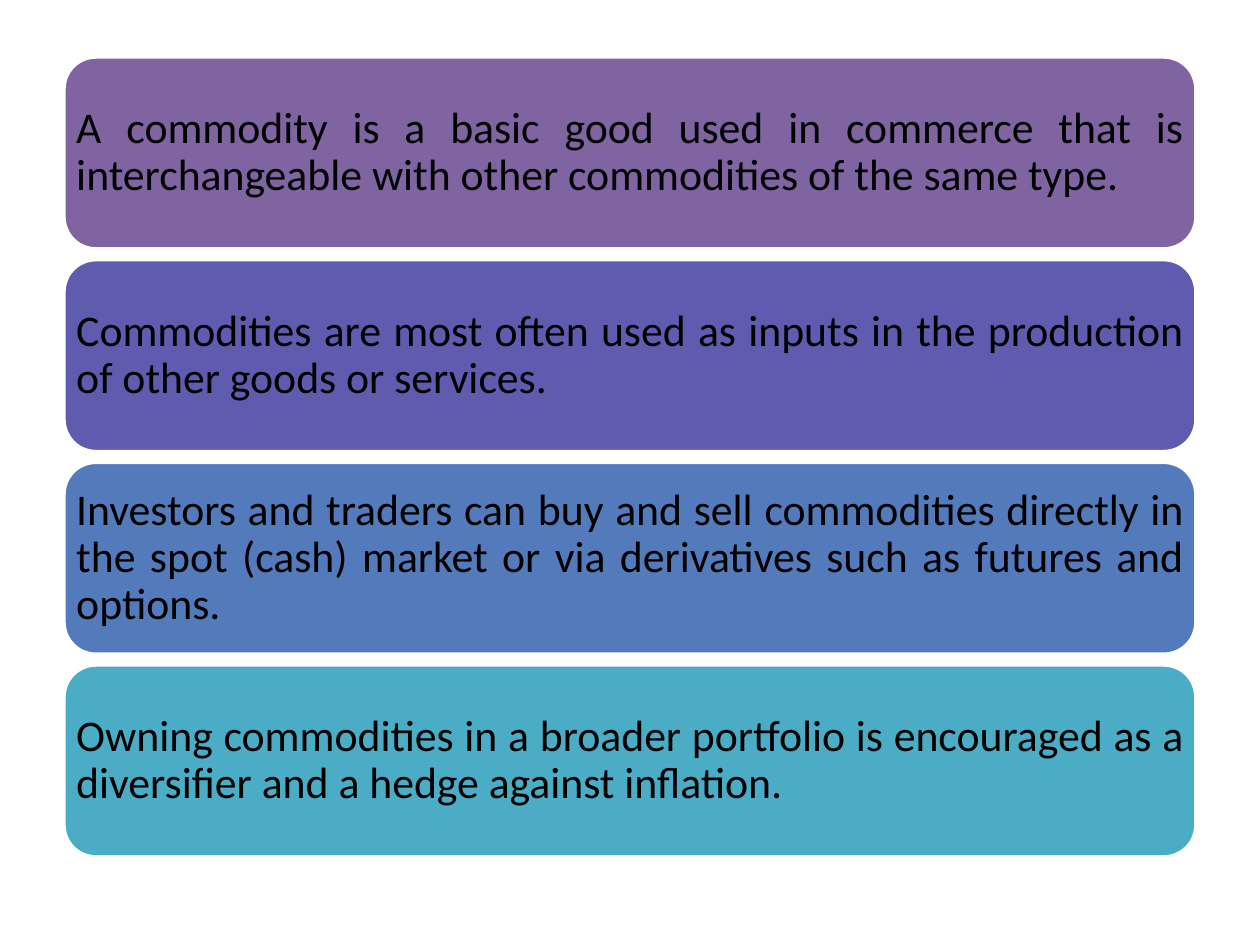
from pptx import Presentation
from pptx.dml.color import RGBColor
from pptx.enum.shapes import MSO_SHAPE as Shape
from pptx.enum.text import MSO_ANCHOR as Anchor, PP_ALIGN as Align
from pptx.util import Emu, Pt

PX_PER_INCH = 126
BLANK_LAYOUT = 6

STATEMENTS = [
    ("8064A2", "A commodity is a basic good used in commerce that is "
               "interchangeable with other commodities of the same type."),
    ("5F5BAE", "Commodities are most often used as inputs in the production "
               "of other goods or services."),
    ("537ABA", "Investors and traders can buy and sell commodities directly in "
               "the spot (cash) market or via derivatives such as futures and options."),
    ("4BACC6", "Owning commodities in a broader portfolio is encouraged as a "
               "diversifier and a hedge against inflation."),
]


def px(length):
    return Emu(round(length * 914400 / PX_PER_INCH))


def color(hex_value):
    return RGBColor.from_string(hex_value)


def add_bar(slide, left, top, width, height, fill, text):
    """Rounded bar holding one justified statement."""
    bar = slide.shapes.add_shape(
        Shape.ROUNDED_RECTANGLE, px(left), px(top), px(width), px(height))
    bar.shadow.inherit = False
    bar.fill.solid()
    bar.fill.fore_color.rgb = color(fill)
    bar.line.color.rgb = color("FFFFFF")
    bar.line.width = Pt(2)

    # The rounded corners already inset the text, so the margins stay small
    frame = bar.text_frame
    frame.word_wrap = True
    frame.vertical_anchor = Anchor.MIDDLE
    frame.margin_left = frame.margin_right = px(3)
    frame.margin_top = frame.margin_bottom = px(3)

    paragraph = frame.paragraphs[0]
    paragraph.alignment = Align.JUSTIFY
    paragraph.line_spacing = 0.9
    run = paragraph.add_run()
    run.text = text
    run.font.name = "Calibri"
    run.font.size = Pt(25)
    run.font.color.rgb = color("000000")


def add_statement_list(slide, left, top, width, height, bar_height):
    """Bars spread evenly from the top to the bottom of the box."""
    pitch = (height - bar_height) / (len(STATEMENTS) - 1)
    for index, (fill, text) in enumerate(STATEMENTS):
        add_bar(slide, left, top + index * pitch, width, bar_height, fill, text)


def main():
    presentation = Presentation()
    presentation.slide_width = px(1260)
    presentation.slide_height = px(945)
    slide = presentation.slides.add_slide(presentation.slide_layouts[BLANK_LAYOUT])
    add_statement_list(slide, 64, 57, 1132, 800, bar_height=192)
    presentation.save("out.pptx")


if __name__ == "__main__":
    main()
